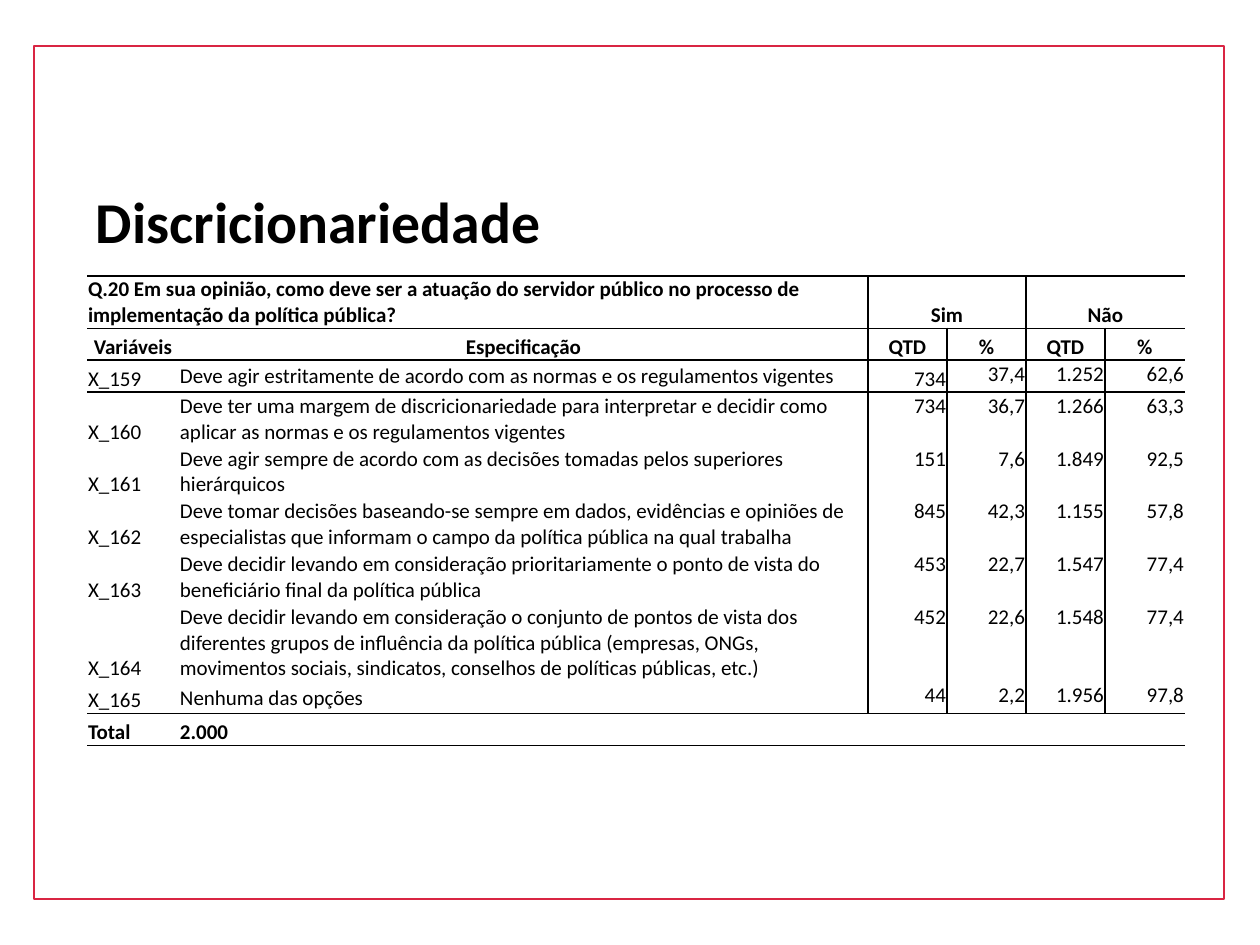
from typing import NamedTuple

from lxml.etree import SubElement
from pptx import Presentation
from pptx.dml.color import RGBColor
from pptx.enum.shapes import MSO_SHAPE
from pptx.enum.text import MSO_ANCHOR as Anchor, MSO_AUTO_SIZE, PP_ALIGN as Align
from pptx.oxml.ns import qn
from pptx.util import Emu, Pt

BLACK = RGBColor(0x00, 0x00, 0x00)
RED = RGBColor(0xD9, 0x25, 0x43)
FONT = "Calibri"
PX_PER_INCH = 126

COLS = [92, 689, 79, 79, 79, 80]
ROWS = [52, 32, 32, 53, 52, 53, 53, 78, 32, 32]
MERGES = [((0, 0), (0, 1)), ((0, 2), (0, 3)), ((0, 4), (0, 5)), ((9, 1), (9, 5))]
RULED_ROWS = {0, 1, 2, 3, 9, 10}
GROUP_EDGES = {2, 4}
INNER_EDGES = {3, 5}


class Answer(NamedTuple):
    code: str
    text: str
    yes: str
    yes_pct: str
    no: str
    no_pct: str


class Box(NamedTuple):
    left: int
    top: int
    width: int
    height: int


QUESTION = ("Q.20 Em sua opinião, como deve ser a atuação do servidor público "
            "no processo de implementação da política pública?")
HEADINGS = ["Variáveis", "Especificação", "QTD", "%", "QTD", "%"]
ANSWERS = [
    Answer("X_159", "Deve agir estritamente de acordo com as normas e os regulamentos vigentes",
           "734", "37,4", "1.252", "62,6"),
    Answer("X_160", "Deve ter uma margem de discricionariedade para interpretar e decidir como "
           "aplicar as normas e os regulamentos vigentes", "734", "36,7", "1.266", "63,3"),
    Answer("X_161", "Deve agir sempre de acordo com as decisões tomadas pelos superiores "
           "hierárquicos", "151", "7,6", "1.849", "92,5"),
    Answer("X_162", "Deve tomar decisões baseando-se sempre em dados, evidências e opiniões de "
           "especialistas que informam o campo da política pública na qual trabalha",
           "845", "42,3", "1.155", "57,8"),
    Answer("X_163", "Deve decidir levando em consideração prioritariamente o ponto de vista do "
           "beneficiário final da política pública", "453", "22,7", "1.547", "77,4"),
    Answer("X_164", "Deve decidir levando em consideração o conjunto de pontos de vista dos "
           "diferentes grupos de influência da política pública (empresas, ONGs, "
           "movimentos sociais, sindicatos, conselhos de políticas públicas, etc.)",
           "452", "22,6", "1.548", "77,4"),
    Answer("X_165", "Nenhuma das opções", "44", "2,2", "1.956", "97,8"),
]


def px(n: int) -> Emu:
    return Emu(round(n * 914400 / PX_PER_INCH))


def apply(target, values: dict) -> None:
    for name, value in values.items():
        setattr(target, name, value)


def set_font(font, size: int, bold: bool) -> None:
    apply(font, {"name": FONT, "size": Pt(size), "bold": bold})
    font.color.rgb = BLACK


def margins(left: int, top: int, right: int, bottom: int) -> dict:
    return {"margin_left": px(left), "margin_top": px(top),
            "margin_right": px(right), "margin_bottom": px(bottom)}


def add_frame(s, box: Box) -> None:
    sp = s.shapes.add_shape(MSO_SHAPE.RECTANGLE, *map(px, box))
    sp.shadow.inherit = False
    sp.fill.background()
    sp.line.color.rgb = RED
    sp.line.width = Pt(1)
    s.shapes._spTree.insert(2, sp._element)


def set_title(s, text: str, box: Box) -> None:
    sp = s.shapes.title
    apply(sp, dict(zip(Box._fields, map(px, box))))
    tf = sp.text_frame
    apply(tf, {**margins(9, 9, 9, 9), "word_wrap": True,
               "auto_size": MSO_AUTO_SIZE.NONE, "vertical_anchor": Anchor.MIDDLE})
    p = tf.paragraphs[0]
    apply(p, {"alignment": Align.LEFT, "line_spacing": 0.9})
    r = p.add_run()
    r.text = text
    set_font(r.font, 33, True)


def has_column_rule(row: int, edge: int) -> bool:
    return (edge in GROUP_EDGES and row < 9) or (edge in INNER_EDGES and 0 < row < 9)


def set_borders(cell, row: int, col: int) -> None:
    tc_pr = cell._tc.get_or_add_tcPr()
    sides = {"a:lnL": has_column_rule(row, col), "a:lnR": has_column_rule(row, col + 1),
             "a:lnT": row in RULED_ROWS, "a:lnB": row + 1 in RULED_ROWS}
    for tag, ruled in sides.items():
        ln = SubElement(tc_pr, qn(tag), w=str(Pt(1)))
        if ruled:
            fill = SubElement(ln, qn("a:solidFill"))
            SubElement(fill, qn("a:srgbClr"), val=str(BLACK))
        else:
            SubElement(ln, qn("a:noFill"))


def cell_layout(row: int, col: int) -> tuple[Align, Anchor]:
    if row == 1 or (row == 0 and col >= 2):
        return Align.CENTER, Anchor.BOTTOM
    if row in (0, 9) or col == 0:
        return Align.LEFT, Anchor.BOTTOM
    if col == 1:
        return Align.LEFT, Anchor.MIDDLE
    return Align.RIGHT, Anchor.BOTTOM if (row, col) == (2, 2) else Anchor.TOP


def set_cell(cell, row: int, col: int, text: str) -> None:
    align, anchor = cell_layout(row, col)
    apply(cell, {**margins(1, 1, 1, 0), "vertical_anchor": anchor})
    set_borders(cell, row, col)
    cell.fill.background()
    p = cell.text_frame.paragraphs[0]
    p.alignment = align
    set_font(p.font, 12, row in (0, 1, 9))
    if text:
        r = p.add_run()
        r.text = text
        set_font(r.font, 12, row in (0, 1, 9))


def add_answer_table(s, left: int, top: int) -> None:
    box = Box(left, top, sum(COLS), sum(ROWS))
    table = s.shapes.add_table(len(ROWS), len(COLS), *map(px, box)).table
    apply(table, {"first_row": False, "horz_banding": False})
    for column, width in zip(table.columns, COLS):
        column.width = px(width)
    for line, height in zip(table.rows, ROWS):
        line.height = px(height)
    content = [[QUESTION, "", "Sim", "", "Não", ""], HEADINGS, *ANSWERS,
               ["Total", "2.000", "", "", "", ""]]
    for row, texts in enumerate(content):
        for col, text in enumerate(texts):
            set_cell(table.cell(row, col), row, col, text)
    for first, last in MERGES:
        table.cell(*first).merge(table.cell(*last))


def main() -> None:
    prs = Presentation()
    apply(prs, {"slide_width": px(1260), "slide_height": px(945)})
    s = prs.slides.add_slide(prs.slide_layouts[5])
    add_frame(s, Box(34, 46, 1190, 853))
    set_title(s, "Discricionariedade", Box(87, 156, 1086, 137))
    add_answer_table(s, 87, 276)
    prs.save("out.pptx")


if __name__ == "__main__":
    main()
